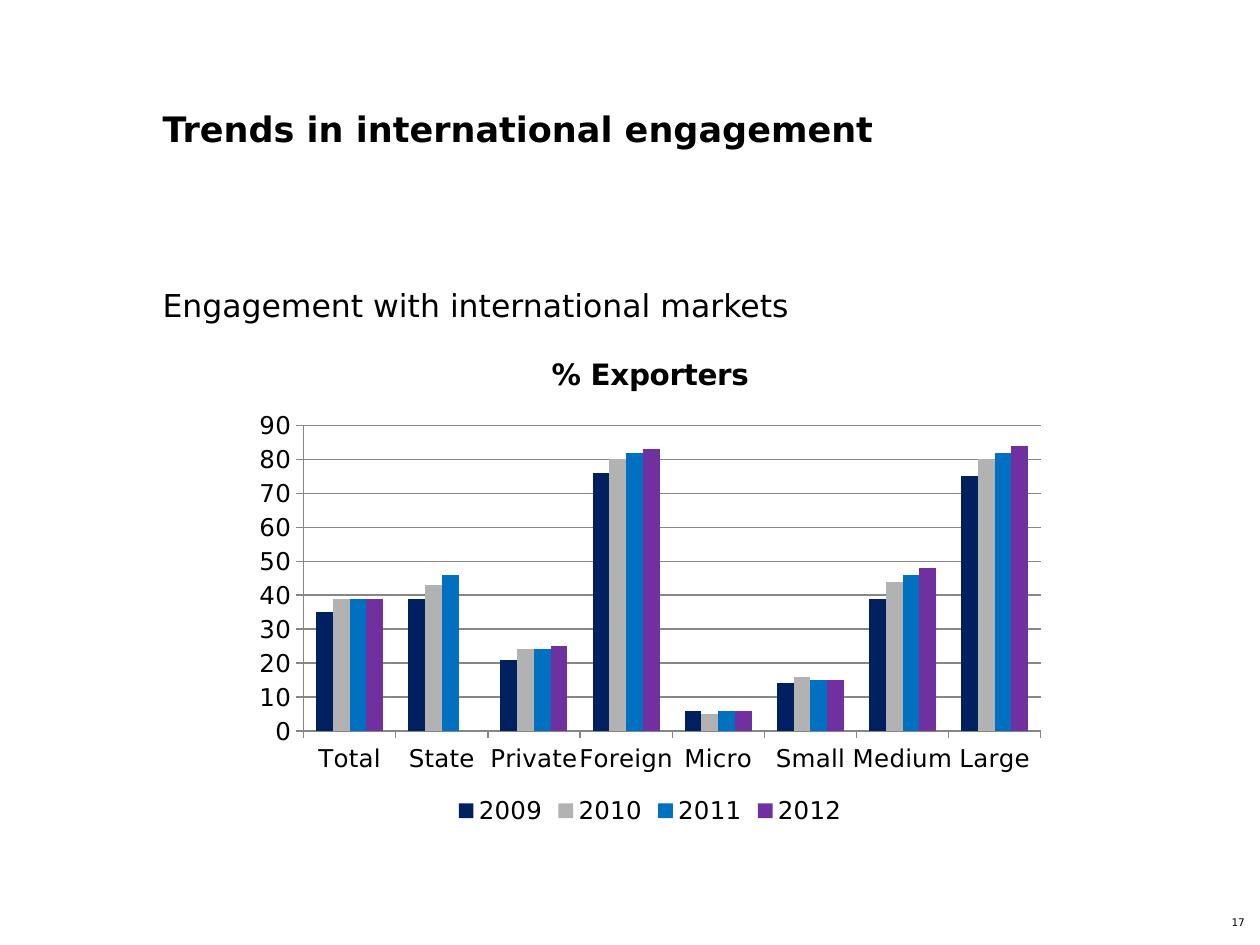
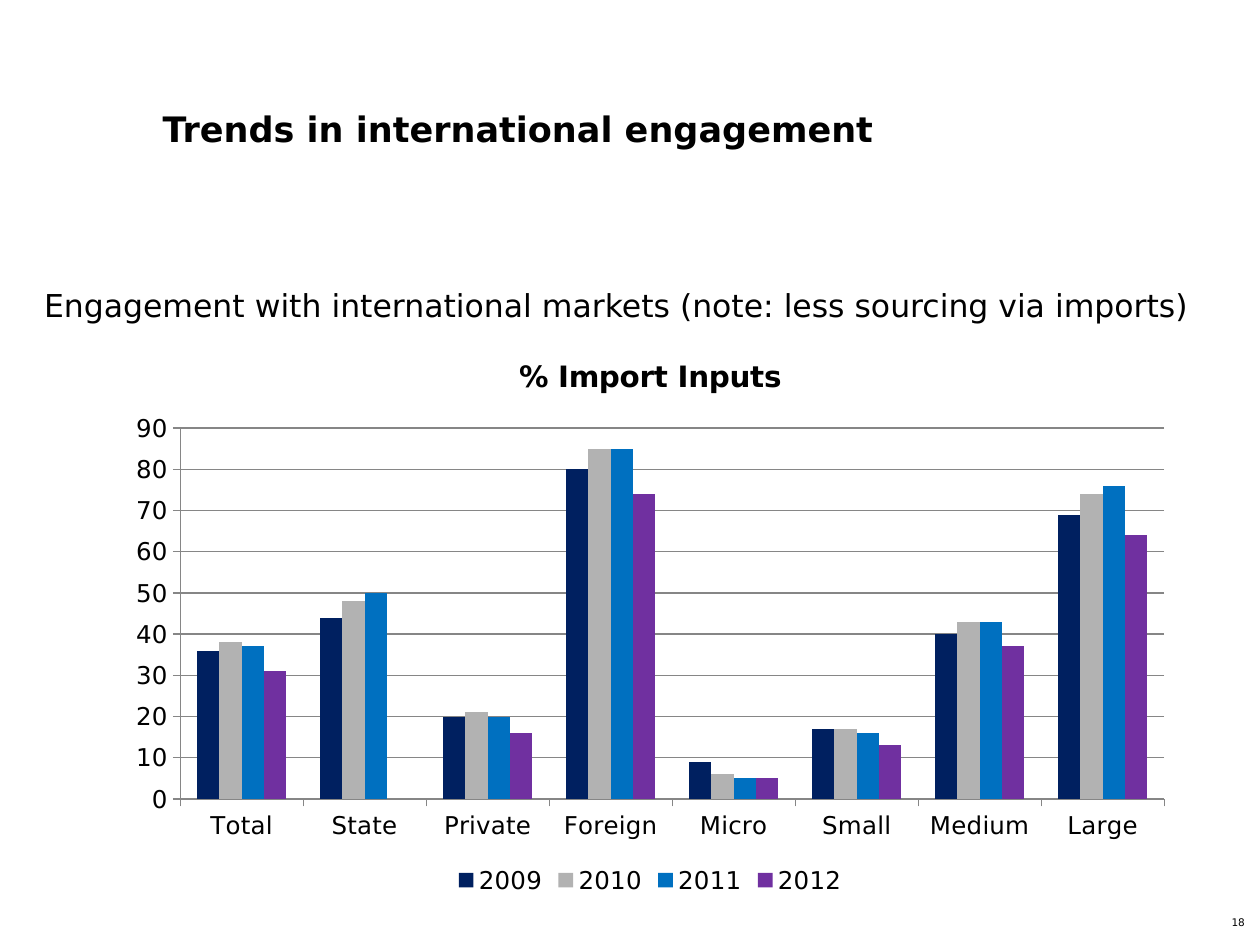
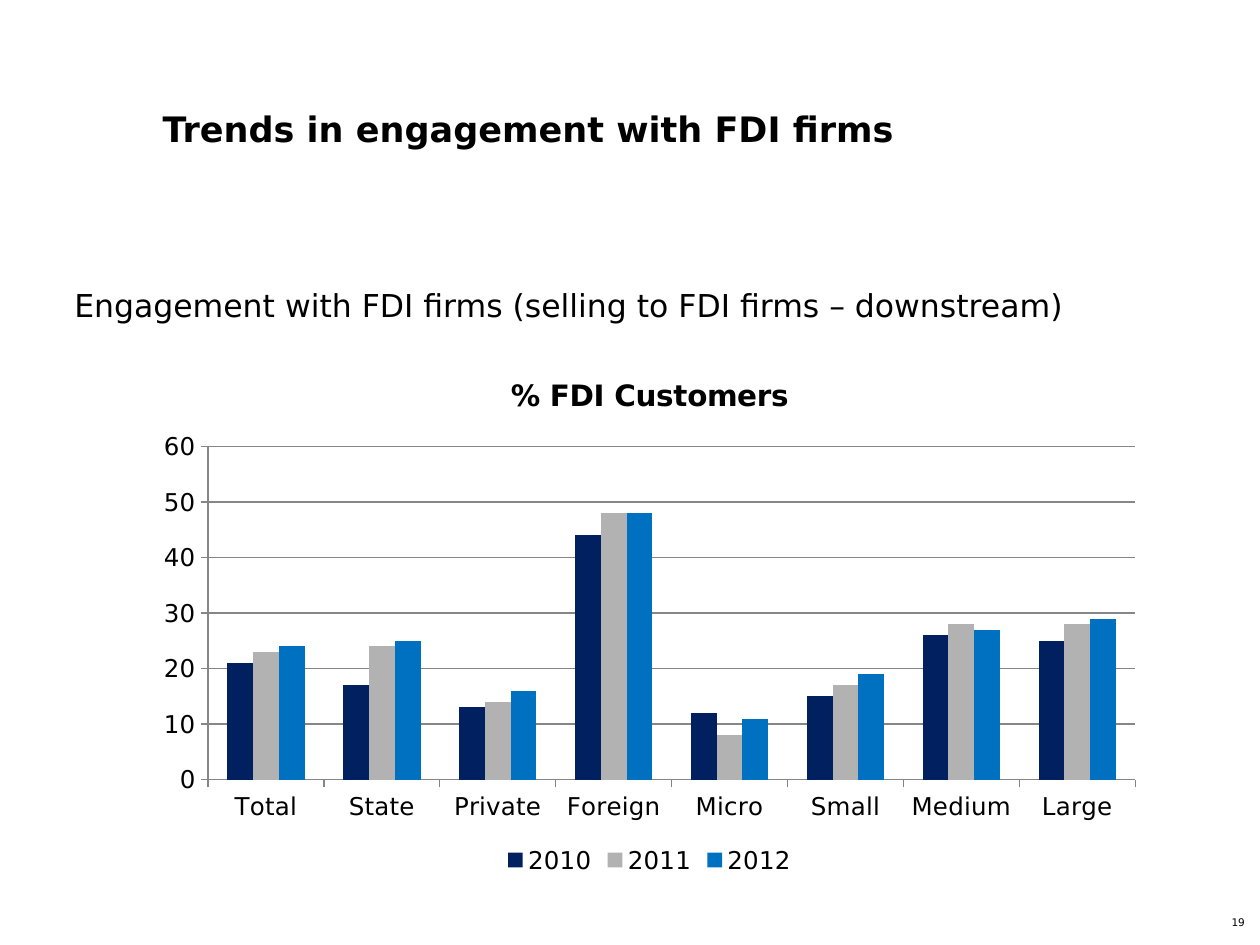
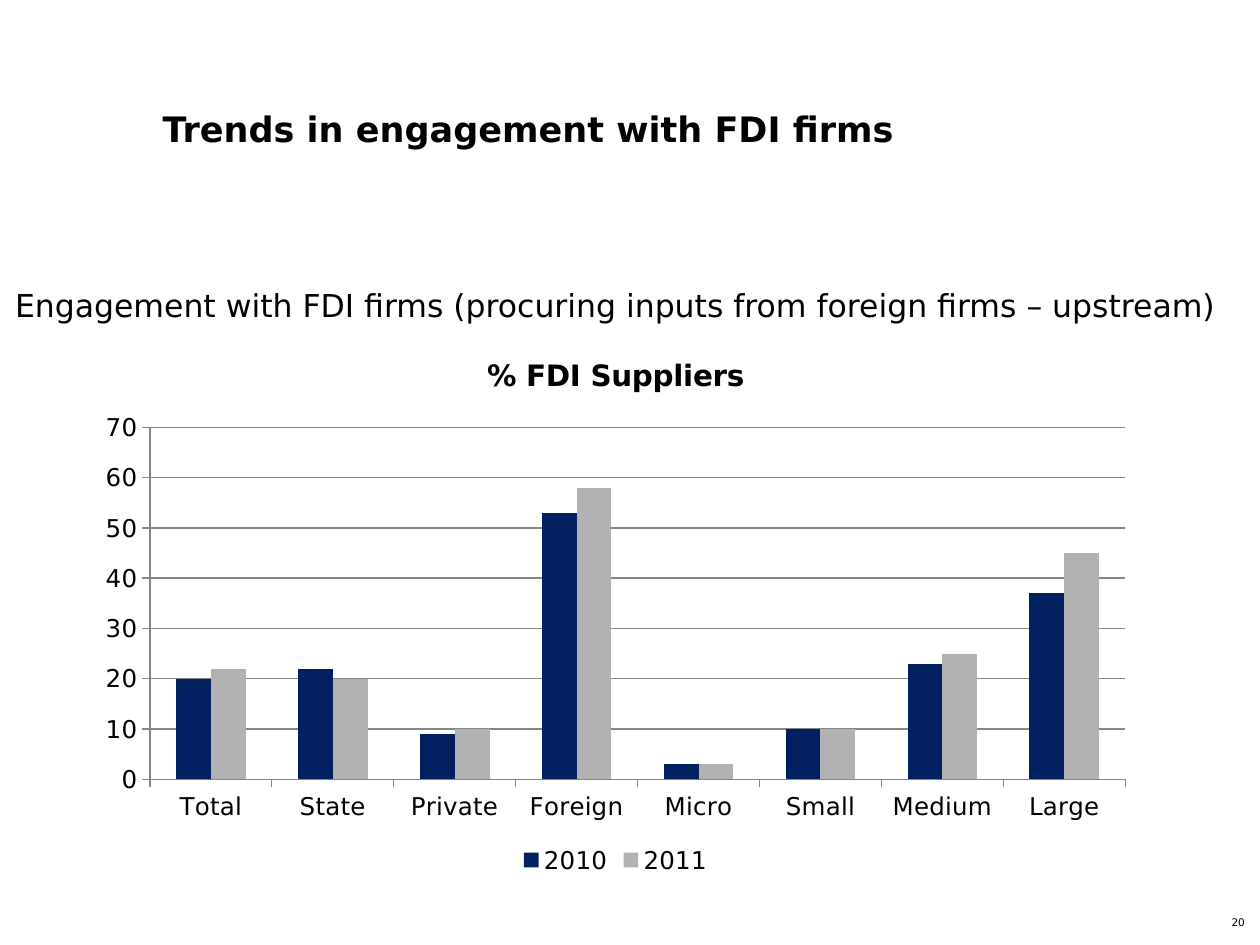
from pptx import Presentation
from pptx.chart.data import CategoryChartData
from pptx.dml.color import RGBColor
from pptx.enum.chart import XL_CHART_TYPE, XL_LEGEND_POSITION, XL_TICK_MARK
from pptx.enum.text import MSO_ANCHOR, PP_ALIGN
from pptx.util import Inches, Pt

COLUMNS = XL_CHART_TYPE.COLUMN_CLUSTERED
BOTTOM = XL_LEGEND_POSITION.BOTTOM
OUTSIDE = XL_TICK_MARK.OUTSIDE
TOP, MIDDLE = MSO_ANCHOR.TOP, MSO_ANCHOR.MIDDLE
LEFT, RIGHT = PP_ALIGN.LEFT, PP_ALIGN.RIGHT

FONT = "DejaVu Sans"
COLORS = {
    "paper": "FFFFFF",
    "text": "000000",
    "grid": "868686",
    "navy": "002060",
    "gray": "B2B2B2",
    "blue": "0070C0",
    "violet": "7030A0",
}
BARS = ("navy", "gray", "blue", "violet")
GROUPS = ("Total", "State", "Private", "Foreign",
          "Micro", "Small", "Medium", "Large")

TITLE_BOX = (1.29, 0.67, 6.7, 0.7)
PAGE_BOX = (9.42, 7.27, 0.46, 0.17)
LEAD_TOP, LEAD_HEIGHT = 2.12, 3.83
FIRST_PAGE = 17

MARKETS = "Trends in international engagement"
FIRMS = "Trends in engagement with FDI firms"

SLIDES = [
    {
        "title": MARKETS,
        "lead": "Engagement with international markets",
        "span": (1.29, 7.04),
        "box": (1.93, 2.65, 6.46, 3.94),
        "name": "% Exporters",
        "top": 90,
        "data": {
            "2009": (35, 39, 21, 76, 6, 14, 39, 75),
            "2010": (39, 43, 24, 80, 5, 16, 44, 80),
            "2011": (39, 46, 24, 82, 6, 15, 46, 82),
            "2012": (39, None, 25, 83, 6, 15, 48, 84),
        },
    },
    {
        "title": MARKETS,
        "lead": "Engagement with international markets "
                "(note: less sourcing via imports)",
        "span": (0.35, 10),
        "box": (0.91, 2.65, 8.5, 4.49),
        "name": "% Import Inputs",
        "top": 90,
        "data": {
            "2009": (36, 44, 20, 80, 9, 17, 40, 69),
            "2010": (38, 48, 21, 85, 6, 17, 43, 74),
            "2011": (37, 50, 20, 85, 5, 16, 43, 76),
            "2012": (31, None, 16, 74, 5, 13, 37, 64),
        },
    },
    {
        "title": FIRMS,
        "lead": "Engagement with FDI firms "
                "(selling to FDI firms – downstream)",
        "span": (0.59, 8.66),
        "box": (1.14, 2.81, 8.03, 4.17),
        "name": "% FDI Customers",
        "top": 60,
        "data": {
            "2010": (21, 17, 13, 44, 12, 15, 26, 25),
            "2011": (23, 24, 14, 48, 8, 17, 28, 28),
            "2012": (24, 25, 16, 48, 11, 19, 27, 29),
        },
    },
    {
        "title": FIRMS,
        "lead": "Engagement with FDI firms "
                "(procuring inputs from foreign firms – upstream)",
        "span": (0.12, 10.47),
        "box": (0.67, 2.65, 8.43, 4.33),
        "name": "% FDI Suppliers",
        "top": 70,
        "data": {
            "2010": (20, 22, 9, 53, 3, 10, 23, 37),
            "2011": (22, 20, 10, 58, 3, 10, 25, 45),
        },
    },
]


def color(key):
    return RGBColor.from_string(COLORS[key])


def place(box):
    return [Inches(length) for length in box]


def style(font, size, bold=False):
    font.name = FONT
    font.size = Pt(size)
    font.bold = bold
    font.color.rgb = color("text")


def add_text(slide, box, text, size, bold=False, align=LEFT,
             anchor=TOP, spacing=1.0):
    frame = slide.shapes.add_textbox(*place(box)).text_frame
    frame.word_wrap = True
    frame.vertical_anchor = anchor
    frame.margin_left = frame.margin_right = 0
    frame.margin_top = frame.margin_bottom = 0
    para = frame.paragraphs[0]
    para.text = text
    para.alignment = align
    para.line_spacing = spacing
    style(para.font, size, bold)


def draw_line(line):
    line.color.rgb = color("grid")
    line.width = Pt(0.75)


def add_bars(slide, box, name, top, data):
    """Add a column chart with one series per year, scaled from 0 to top."""
    table = CategoryChartData()
    table.categories = GROUPS
    for year, values in data.items():
        table.add_series(year, values)
    chart = slide.shapes.add_chart(COLUMNS, *place(box), table).chart
    style(chart.font, 14)

    chart.has_title = True
    para = chart.chart_title.text_frame.paragraphs[0]
    para.text = name
    style(para.font, 16.8, bold=True)
    chart.chart_title.include_in_layout = False

    chart.has_legend = True
    chart.legend.position = BOTTOM
    chart.legend.include_in_layout = False

    for axis in (chart.category_axis, chart.value_axis):
        axis.major_tick_mark = OUTSIDE
        draw_line(axis.format.line)
    scale = chart.value_axis
    scale.minimum_scale, scale.maximum_scale = 0, top
    scale.major_unit = 10
    scale.has_major_gridlines = True
    draw_line(scale.major_gridlines.format.line)

    plot = chart.plots[0]
    plot.vary_by_categories = False
    plot.gap_width = 150
    for series, key in zip(plot.series, BARS):
        series.format.fill.solid()
        series.format.fill.fore_color.rgb = color(key)


def add_page(deck, number, page):
    slide = deck.slides.add_slide(deck.slide_layouts[6])
    slide.background.fill.solid()
    slide.background.fill.fore_color.rgb = color("paper")
    left, width = page["span"]
    add_text(slide, TITLE_BOX, page["title"], 20, bold=True, anchor=MIDDLE)
    add_text(slide, PAGE_BOX, str(number), 6, align=RIGHT)
    add_text(slide, (left, LEAD_TOP, width, LEAD_HEIGHT), page["lead"], 18,
             spacing=1.5)
    add_bars(slide, page["box"], page["name"], page["top"], page["data"])


def main():
    deck = Presentation()
    deck.slide_width, deck.slide_height = Inches(10), Inches(7.5)
    for number, page in enumerate(SLIDES, FIRST_PAGE):
        add_page(deck, number, page)
    deck.save("out.pptx")


if __name__ == "__main__":
    main()
